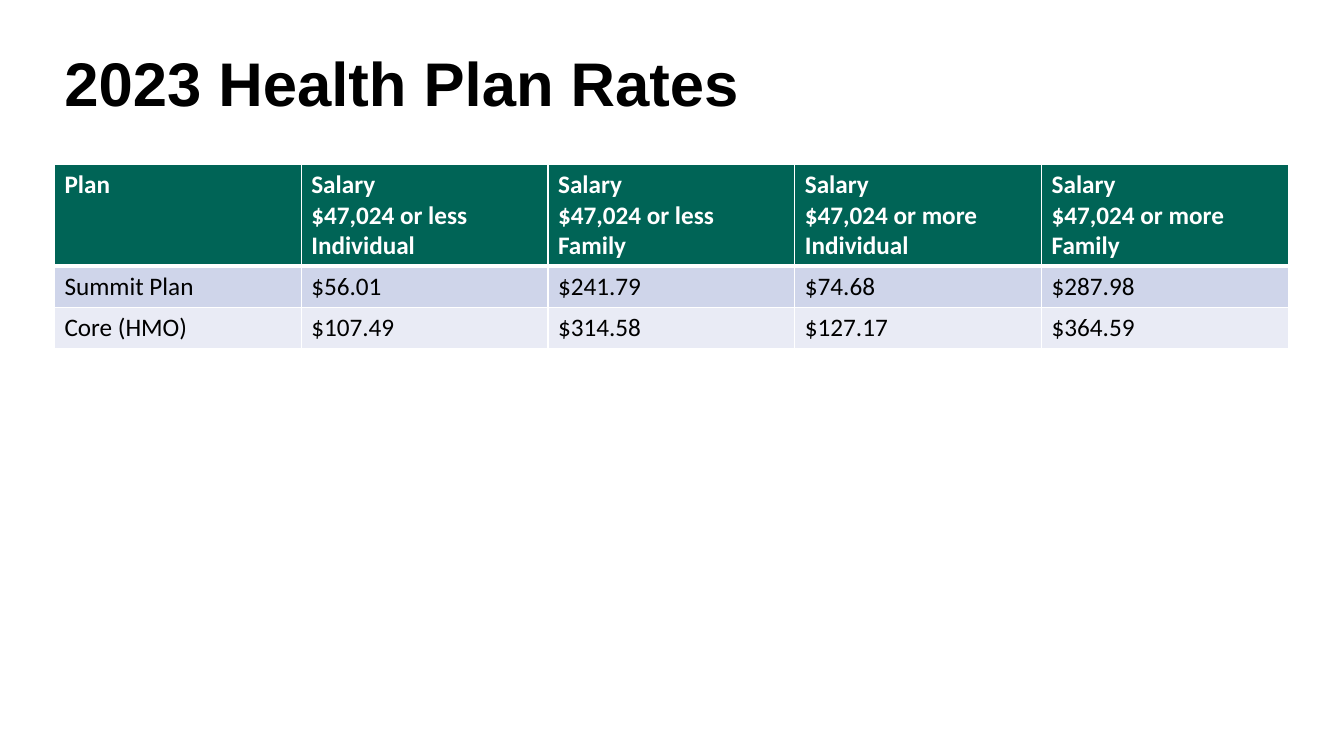
from lxml import etree
from pptx import Presentation
from pptx.dml.color import RGBColor
from pptx.enum import text
from pptx.oxml import ns
from pptx.util import Inches, Pt

BLACK = RGBColor(0x00, 0x00, 0x00)
WHITE = RGBColor(0xFF, 0xFF, 0xFF)
GREEN = RGBColor(0x00, 0x64, 0x56)
BAND_DARK = RGBColor(0xCF, 0xD5, 0xEA)
BAND_LIGHT = RGBColor(0xE9, 0xEB, 0xF5)

LEFT, WIDTH = 0.54, 12.24
ROW_FILLS = [GREEN, BAND_DARK, BAND_LIGHT]
ROW_HEIGHTS = [1.01, 0.41, 0.41]
RATES = [
    ["Plan",
     "Salary\n$47,024 or less\nIndividual",
     "Salary\n$47,024 or less\nFamily",
     "Salary\n$47,024 or more\nIndividual",
     "Salary\n$47,024 or more\nFamily"],
    ["Summit Plan", "$56.01", "$241.79", "$74.68", "$287.98"],
    ["Core (HMO)", "$107.49", "$314.58", "$127.17", "$364.59"],
]


def add_border(cell, side, points):
    properties = cell._tc.get_or_add_tcPr()
    line = etree.SubElement(properties, ns.qn(f"a:ln{side}"), w=str(Pt(points)))
    fill = etree.SubElement(line, ns.qn("a:solidFill"))
    etree.SubElement(fill, ns.qn("a:srgbClr"), val=str(WHITE))


presentation = Presentation()
presentation.slide_width = Inches(13.33)
presentation.slide_height = Inches(7.5)
slide = presentation.slides.add_slide(presentation.slide_layouts[6])

# Title
title = slide.shapes.add_textbox(Inches(LEFT), Inches(0.13), Inches(WIDTH), Inches(1.45))
frame = title.text_frame
frame.word_wrap = True
frame.vertical_anchor = text.MSO_ANCHOR.MIDDLE
paragraph = frame.paragraphs[0]
paragraph.text = "2023 Health Plan Rates"
paragraph.line_spacing = 0.9
paragraph.font.name = "Arial"
paragraph.font.size = Pt(44)
paragraph.font.bold = True
paragraph.font.color.rgb = BLACK

# Rates table
table = slide.shapes.add_table(
    len(RATES), len(RATES[0]), Inches(LEFT), Inches(1.63),
    Inches(WIDTH), Inches(sum(ROW_HEIGHTS))).table

for row, values in enumerate(RATES):
    is_header = row == 0
    table.rows[row].height = Inches(ROW_HEIGHTS[row])
    for column, value in enumerate(values):
        cell = table.cell(row, column)
        cell.text = value
        # The rule under the header is thicker than the others
        for side in "LRTB":
            under_header = (row, side) in [(0, "B"), (1, "T")]
            add_border(cell, side, 3 if under_header else 1)
        cell.fill.solid()
        cell.fill.fore_color.rgb = ROW_FILLS[row]
        for paragraph in cell.text_frame.paragraphs:
            paragraph.font.name = "Calibri"
            paragraph.font.size = Pt(18)
            paragraph.font.bold = is_header
            paragraph.font.color.rgb = WHITE if is_header else BLACK

presentation.save("out.pptx")
